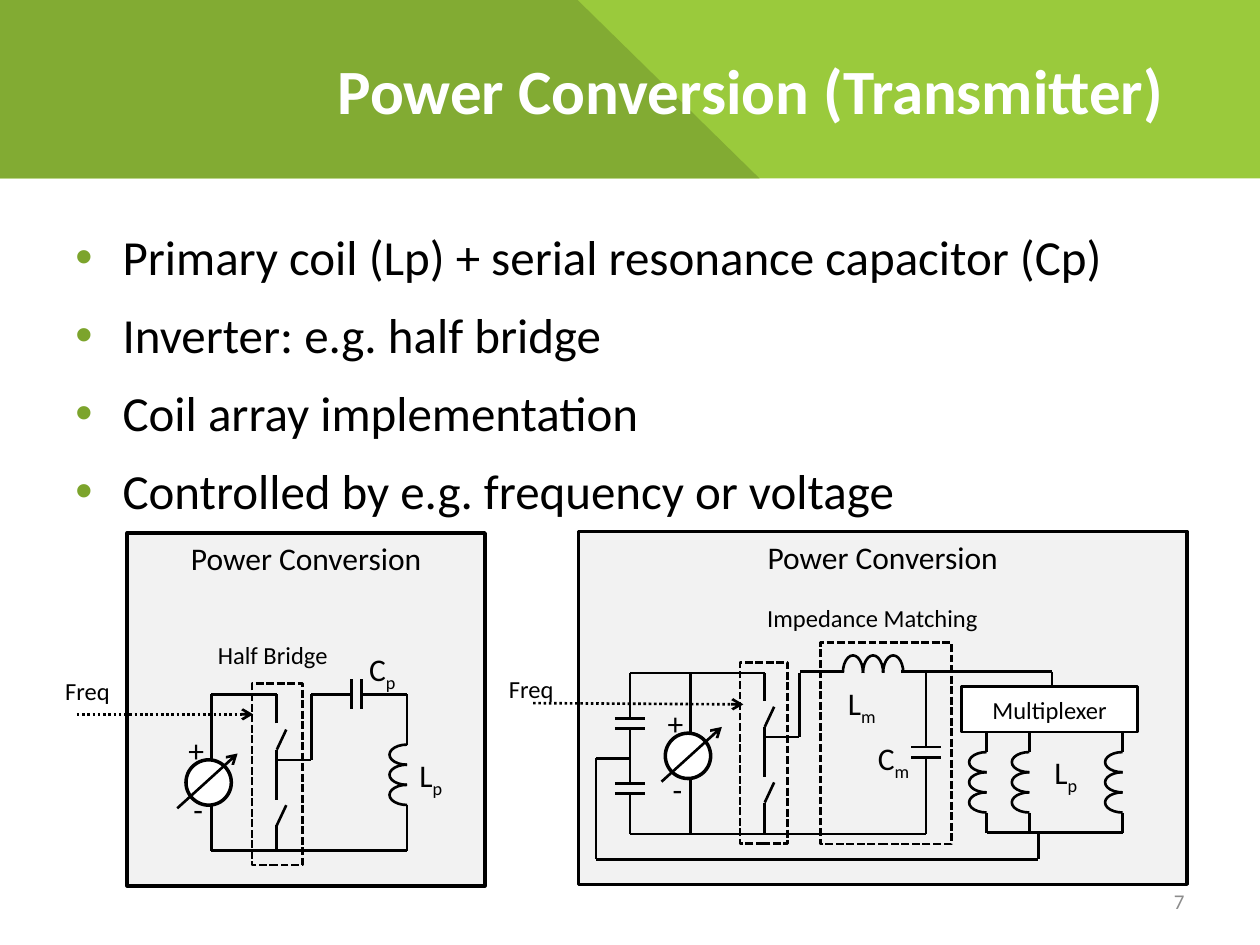
from dataclasses import dataclass
from itertools import pairwise
from typing import NamedTuple

from lxml import etree
from pptx import Presentation
from pptx import util as u
from pptx.dml.color import RGBColor
from pptx.enum import dml, shapes, text
from pptx.oxml.ns import qn


@dataclass(frozen=True)
class Theme:
    font: str = "Calibri"
    light_green: str = "9ACA3C"
    dark_green: str = "82AB33"
    bullet_green: str = "7CA42C"
    panel: str = "F2F2F2"
    white: str = "FFFFFF"
    black: str = "000000"
    grey: str = "8C8C8C"
    title_size: float = 36
    body_size: float = 28
    symbol_size: float = 18
    label_size: float = 14
    number_size: float = 12
    wire: float = 1.5
    outline: float = 2


class Box(NamedTuple):
    left: float
    top: float
    width: float
    height: float


class Label(NamedTuple):
    box: Box
    words: str
    subscript: str = ""
    size: float = 18


@dataclass(frozen=True)
class HalfBridge:
    source_x: float
    switch_x: float
    top: float
    bottom: float
    rail_end: float
    dial_top: float
    pivot: float
    needle_start: float
    box_width: float
    minus_drop: float


THEME = Theme()
DASHED = dml.MSO_LINE.SQUARE_DOT
DOTTED = dml.MSO_LINE.ROUND_DOT
TURN = 11.5
PLATE = 17.2
GAP = 5.8

PANELS = [Box(72.7, 304.6, 204.5, 201.6), Box(330.5, 303.8, 347.8, 201.6)]
BULLETS = [
    "Primary coil (Lp) + serial resonance capacitor (Cp)",
    "Inverter: e.g. half bridge",
    "Coil array implementation",
    "Controlled by e.g. frequency or voltage",
]
BRIDGES = [
    HalfBridge(120.7, 158.2, 396.7, 486, 232.6, 434.2, 428.4, -5, 28.8, 13.7),
    HalfBridge(394.6, 437, 384.5, 476.6, 529.2, 419, 415.4, -2.2, 27.4, 17.3),
]
CAPACITORS = [(203.8, 396.7, True), (360, 413.3, False), (360, 450.7, False), (529.2, 429.8, False)]
ARRAY_COILS = [563.8, 588.2, 641.5]
COILS = [(232.6, 425.5, False), (481.7, 384.5, True)] + [(x, 429.8, False) for x in ARRAY_COILS]
WIRES = [
    [(177.8, 396.7), (200.9, 396.7)],
    [(206.7, 396.7), (232.6, 396.7), (232.6, 425.5)],
    [(232.6, 460), (232.6, 486)],
    [(394.6, 384.5), (360, 384.5), (360, 410.4)],
    [(360, 416.2), (360, 447.8)],
    [(360, 453.6), (360, 476.6), (394.6, 476.6)],
    [(360, 433.4), (340.6, 433.4), (340.6, 491), (593.3, 491), (593.3, 475.9)],
    [(457.2, 383.8), (481.7, 383.8)],
    [(515, 383.8), (601.2, 383.8), (601.2, 392.4)],
    [(529.2, 383.8), (529.2, 426.9)],
    [(529.2, 432.7), (529.2, 476.6)],
    [(563.8, 475.9), (641.5, 475.9)],
]
WIRES += [[(x, start), (x, end)] for x in ARRAY_COILS for start, end in [(418.3, 429.8), (464.4, 475.9)]]
LABELS = [
    Label(Box(203.8, 367.9, 34.6, 28.8), "C", "p"),
    Label(Box(232.6, 428.4, 32.4, 28.8), "L", "p"),
    Label(Box(595.4, 427, 32.4, 28.8), "L", "p"),
    Label(Box(477.4, 387.4, 40.3, 28.8), "L", "m"),
    Label(Box(494.6, 419, 40.3, 28.8), "C", "m"),
    Label(Box(117.4, 362.2, 84.2, 24.5), "Half Bridge", size=THEME.label_size),
    Label(Box(431.3, 341.3, 145.4, 24.5), "Impedance Matching", size=THEME.label_size),
    Label(Box(30.2, 383, 116.6, 33.1), "Freq", size=THEME.label_size),
    Label(Box(283.7, 381.6, 160.6, 36), "Freq", size=THEME.label_size),
]
SIGNALS = [[(43.9, 408.2), (144.7, 408.2)], [(304.6, 401.8), (424.8, 402.5)]]


def points(*values: float) -> list:
    return [u.Pt(value) for value in values]


def add_run(paragraph, words: str, size: float, colour: str = THEME.black, bold: bool = False, baseline: int = 0) -> None:
    run = paragraph.add_run()
    run.text = words
    run.font.name, run.font.size, run.font.bold = THEME.font, u.Pt(size), bold
    run.font.color.rgb = RGBColor.from_string(colour)
    if baseline:
        run.font._element.set("baseline", str(baseline))


def add_frame(slide, box: Box, anchor=text.MSO_ANCHOR.TOP):
    frame = slide.shapes.add_textbox(*points(*box)).text_frame
    frame.word_wrap = True
    frame.vertical_anchor = anchor
    return frame


def add_label(slide, label: Label) -> None:
    paragraph = add_frame(slide, label.box).paragraphs[0]
    add_run(paragraph, label.words, label.size)
    if label.subscript:
        add_run(paragraph, label.subscript, label.size, baseline=-25000)


def paint(shape, fill: str = "", line_width: float = 0, dash=None) -> None:
    shape.shadow.inherit = False
    if fill:
        shape.fill.solid()
        shape.fill.fore_color.rgb = RGBColor.from_string(fill)
    else:
        shape.fill.background()
    if line_width:
        shape.line.color.rgb = RGBColor.from_string(THEME.black)
        shape.line.width = u.Pt(line_width)
        if dash:
            shape.line.dash_style = dash
    else:
        shape.line.fill.background()


def add_shape(slide, kind, box: Box, fill: str = "", line_width: float = 0, dash=None):
    shape = slide.shapes.add_shape(kind, *points(*box))
    paint(shape, fill, line_width, dash)
    return shape


def add_block(slide, box: Box, fill: str, line_width: float, words: str, size: float, anchor) -> None:
    frame = add_shape(slide, shapes.MSO_SHAPE.RECTANGLE, box, fill, line_width).text_frame
    frame.word_wrap, frame.vertical_anchor = True, anchor
    frame.paragraphs[0].alignment = text.PP_ALIGN.CENTER
    add_run(frame.paragraphs[0], words, size)


def add_wire(slide, route: list, dash=None, arrow: bool = False) -> None:
    for start, end in pairwise(route):
        wire = slide.shapes.add_connector(shapes.MSO_CONNECTOR.STRAIGHT, *points(*start, *end))
        wire.line.color.rgb = RGBColor.from_string(THEME.black)
        wire.line.width = u.Pt(THEME.wire)
        if dash:
            wire.line.dash_style = dash
        if arrow:
            etree.SubElement(wire.line._get_or_add_ln(), qn("a:tailEnd"), type="arrow")
        etree.SubElement(wire._element.spPr, qn("a:effectLst"))


def add_coil(slide, x: float, y: float, horizontal: bool) -> None:
    for turn in range(3):
        along = TURN * (turn + 0.5)
        centre_x, centre_y = (x + along, y) if horizontal else (x, y + along)
        arc = add_shape(slide, shapes.MSO_SHAPE.ARC, Box(centre_x - 10, centre_y - TURN / 2, 20, TURN), line_width=THEME.wire)
        arc.adjustments[0], arc.adjustments[1] = 162, 54
        arc._element.spPr.get_or_add_xfrm().set("flipH", "1")
        arc.rotation = 90 if horizontal else 0


def add_capacitor(slide, x: float, y: float, horizontal: bool) -> None:
    for shift in (-GAP / 2, GAP / 2):
        if horizontal:
            add_wire(slide, [(x + shift, y - PLATE / 2), (x + shift, y + PLATE / 2)])
        else:
            add_wire(slide, [(x - PLATE / 2, y + shift), (x + PLATE / 2, y + shift)])


def add_half_bridge(slide, bridge: HalfBridge) -> None:
    source, switch, pivot = bridge.source_x, bridge.switch_x, bridge.pivot
    lower, output = pivot + 43.2, pivot + 5.8
    dial_left, dial_top = source - 14.4, bridge.dial_top
    add_wire(slide, [(switch, pivot - 15), (switch, bridge.top), (source, bridge.top),
                     (source, bridge.bottom), (bridge.rail_end, bridge.bottom)])
    add_wire(slide, [(switch + 5.4, pivot - 11.5), (switch, pivot), (switch, pivot + 28.8)])
    add_wire(slide, [(switch + 5.4, lower - 11.5), (switch, lower), (switch, bridge.bottom)])
    add_wire(slide, [(switch, output), (switch + 19.8, output), (switch + 19.8, bridge.top)])
    add_shape(slide, shapes.MSO_SHAPE.RECTANGLE, Box(switch - 14.2, bridge.top - 6, bridge.box_width, 103.7),
              line_width=THEME.wire, dash=DASHED)
    add_shape(slide, shapes.MSO_SHAPE.OVAL, Box(dial_left, dial_top, 25.9, 25.9), THEME.white, THEME.outline)
    add_label(slide, Label(Box(dial_left - 5.8, dial_top - 20.2, 25.2, 28.8), "+"))
    add_label(slide, Label(Box(dial_left - 2.9, dial_top + bridge.minus_drop, 20.9, 28.8), "-"))
    needle = dial_left + bridge.needle_start
    add_wire(slide, [(needle, dial_top + 27.7), (needle + 34.5, dial_top - 3.6)], arrow=True)


def add_header(slide) -> None:
    add_shape(slide, shapes.MSO_SHAPE.RECTANGLE, Box(0, 0, 720, 102), THEME.light_green)
    builder = slide.shapes.build_freeform(0, 0, scale=u.Pt(1))
    builder.add_line_segments([(330, 0), (434, 102), (0, 102)], close=True)
    paint(builder.convert_to_shape(), THEME.dark_green)
    frame = add_frame(slide, Box(185.8, 0, 534.2, 102), text.MSO_ANCHOR.MIDDLE)
    add_run(frame.paragraphs[0], "Power Conversion (Transmitter)", THEME.title_size, THEME.white, bold=True)


def add_bullets(slide) -> None:
    frame = add_frame(slide, Box(36, 126, 648, 356.4))
    for index, words in enumerate(BULLETS):
        paragraph = frame.add_paragraph() if index else frame.paragraphs[0]
        properties = paragraph._p.get_or_add_pPr()
        properties.set("marL", str(u.Pt(27)))
        properties.set("indent", str(u.Pt(-27)))
        colour = etree.SubElement(properties, qn("a:buClr"))
        etree.SubElement(colour, qn("a:srgbClr"), val=THEME.bullet_green)
        etree.SubElement(properties, qn("a:buFont"), typeface="Arial")
        etree.SubElement(properties, qn("a:buChar"), char="•")
        paragraph.space_before = u.Pt(11 if index else 0)
        add_run(paragraph, words, THEME.body_size)


def main() -> None:
    presentation = Presentation()
    presentation.slide_width, presentation.slide_height = points(720, 540)
    slide = presentation.slides.add_slide(presentation.slide_layouts[6])
    add_header(slide)
    for panel in PANELS:
        add_block(slide, panel, THEME.panel, THEME.outline, "Power Conversion", THEME.symbol_size, text.MSO_ANCHOR.TOP)
    add_bullets(slide)
    for bridge in BRIDGES:
        add_half_bridge(slide, bridge)
    for route in WIRES:
        add_wire(slide, route)
    for capacitor in CAPACITORS:
        add_capacitor(slide, *capacitor)
    for coil in COILS:
        add_coil(slide, *coil)
    add_shape(slide, shapes.MSO_SHAPE.RECTANGLE, Box(468.7, 367.2, 74.9, 115.2), line_width=THEME.wire, dash=DASHED)
    add_block(slide, Box(549.4, 392.4, 100.8, 25.9), THEME.white, THEME.wire, "Multiplexer", THEME.label_size, text.MSO_ANCHOR.MIDDLE)
    for signal in SIGNALS:
        add_wire(slide, signal, DOTTED, arrow=True)
    for label in LABELS:
        add_label(slide, label)
    number = add_frame(slide, Box(516.2, 500.4, 167.8, 28.8), text.MSO_ANCHOR.MIDDLE).paragraphs[0]
    number.alignment = text.PP_ALIGN.RIGHT
    add_run(number, "7", THEME.number_size, THEME.grey)
    presentation.save("out.pptx")


if __name__ == "__main__":
    main()
